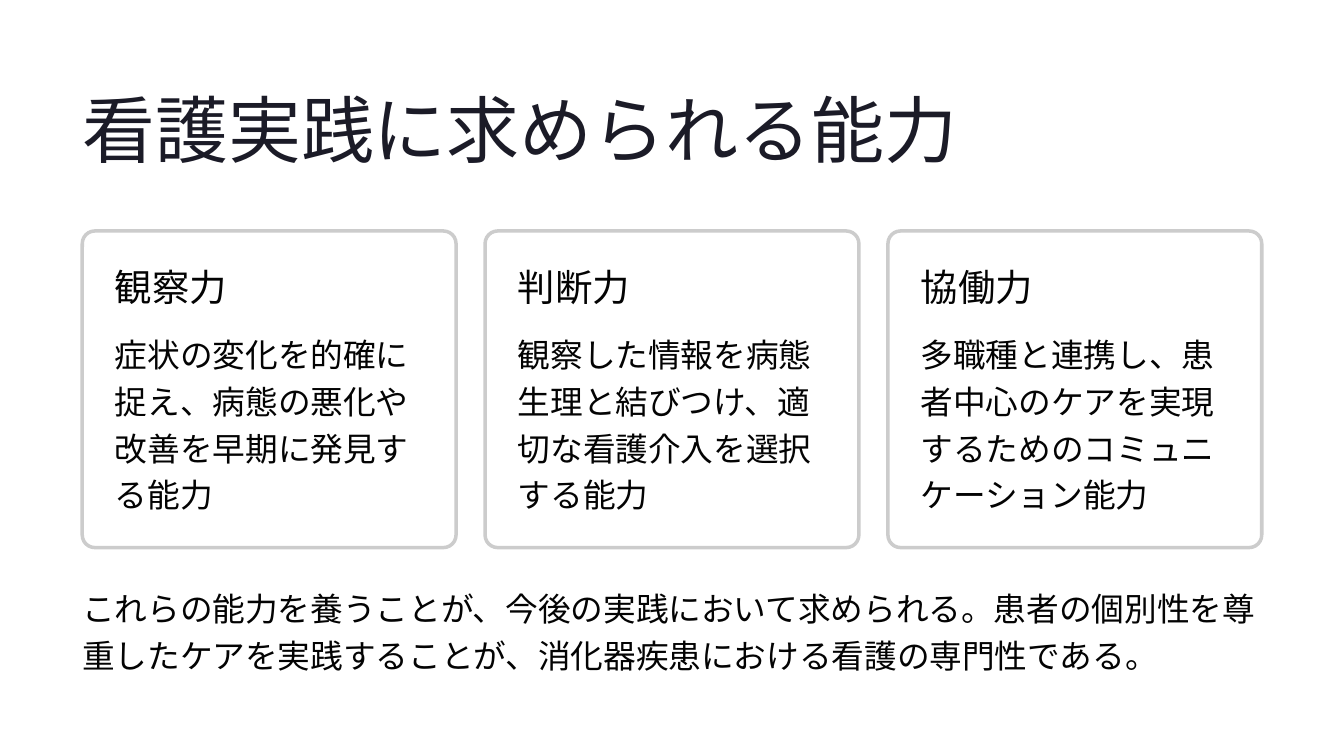
from lxml.etree import SubElement
from pptx import Presentation
from pptx.dml.color import RGBColor
from pptx.enum.lang import MSO_LANGUAGE_ID as Lang
from pptx.enum.shapes import MSO_SHAPE as Shape
from pptx.oxml.ns import qn
from pptx.util import Pt

LEFT, WIDTH = 70.5, 1011
CARD_TOP, CARD_W, CARD_H, GAP = 198, 320.4, 271.4, 24.9
PAD = 28.1
CARDS = [
    ("観察力", "症状の変化を的確に捉え、病態の悪化や改善を早期に発見する能力"),
    ("判断力", "観察した情報を病態生理と結びつけ、適切な看護介入を選択する能力"),
    ("協働力", "多職種と連携し、患者中心のケアを実現するためのコミュニケーション能力"),
]
SUMMARY = ("これらの能力を養うことが、今後の実践において求められる。"
           "患者の個別性を尊重したケアを実践することが、消化器疾患における看護の専門性である。")
FORMATS = {
    "title": dict(name="Inter", size=62.5, color="1B1B27", spacing=78.5, wrap=False),
    "heading": dict(name="Inter", size=32, color="030303", spacing=39, wrap=False),
    "body": dict(name="Cabin", size=28, color="030303", spacing=40, wrap=True),
}


def rgb(value):
    return RGBColor.from_string(value)


def add_text(s, text, style, x, y, w, h):
    fmt = FORMATS[style]
    tf = s.shapes.add_textbox(Pt(x), Pt(y), Pt(w), Pt(h)).text_frame
    for side in ("left", "top", "right", "bottom"):
        setattr(tf, f"margin_{side}", 0)
    tf.word_wrap = fmt["wrap"]
    p = tf.paragraphs[0]
    p.line_spacing = Pt(fmt["spacing"])
    r = p.add_run()
    r.text = text
    font = dict(name=fmt["name"], size=Pt(fmt["size"]), language_id=Lang.JAPANESE)
    for key, value in font.items():
        setattr(r.font, key, value)
    r.font.color.rgb = rgb(fmt["color"])
    SubElement(r.font._element, qn("a:ea"), typeface=fmt["name"])


def add_card(s, x, heading, body):
    sp = s.shapes.add_shape(Shape.ROUNDED_RECTANGLE, Pt(x), Pt(CARD_TOP), Pt(CARD_W), Pt(CARD_H))
    sp.adjustments[0] = 0.04
    sp.shadow.inherit = False
    sp.fill.solid()
    sp.fill.fore_color.rgb = rgb("FFFFFF")
    color = sp.fill._xPr.find(qn("a:solidFill")).find(qn("a:srgbClr"))
    SubElement(color, qn("a:alpha"), val="95000")
    sp.line.color.rgb = rgb("CCCCCC")
    sp.line.width = Pt(3)
    inner_w = CARD_W - 2 * PAD
    add_text(s, heading, "heading", x + PAD, CARD_TOP + PAD, inner_w, 39.5)
    add_text(s, body, "body", x + PAD, CARD_TOP + 82.8, inner_w, 160.5)


def main():
    prs = Presentation()
    prs.slide_width, prs.slide_height = Pt(1152), Pt(648)
    s = prs.slides.add_slide(prs.slide_layouts[6])
    add_text(s, "看護実践に求められる能力", "title", LEFT, 69, 754, 78.5)
    for i, (heading, body) in enumerate(CARDS):
        add_card(s, LEFT + i * (CARD_W + GAP), heading, body)
    add_text(s, SUMMARY, "body", LEFT, 498.3, WIDTH, 80.5)
    prs.save("out.pptx")


if __name__ == "__main__":
    main()
